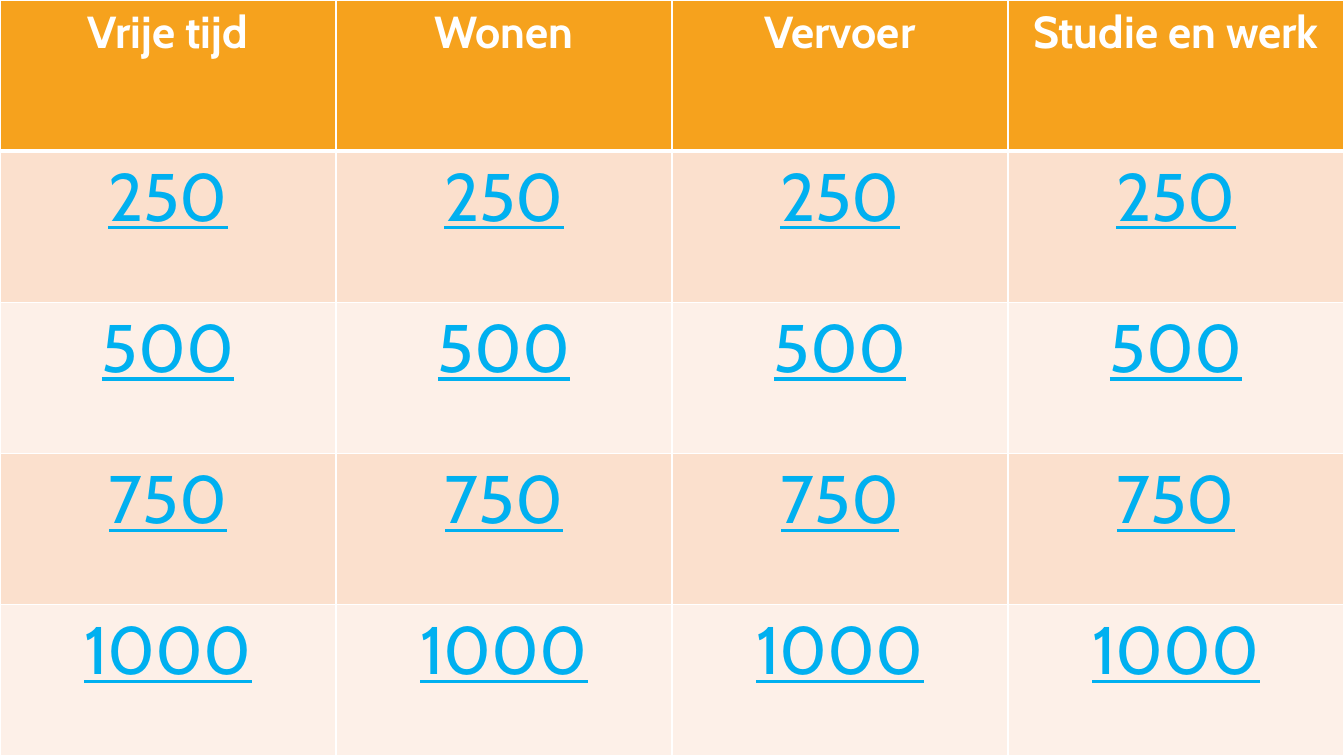
from dataclasses import dataclass

import lxml.etree
import pptx
import pptx.dml.color
import pptx.enum.text
import pptx.oxml.ns
import pptx.util


@dataclass(frozen=True)
class Theme:
    """Colours, font and sizes of the quiz board."""
    font: str = "Cabin"
    background: str = "F2F2F2"
    header_fill: str = "F6A21D"
    band_fills: tuple = ("FBE0CD", "FDF0E8")
    header_text: str = "FFFFFF"
    points_text: str = "00B0F0"
    border: str = "FFFFFF"
    header_size: int = 32
    points_size: int = 48
    thin_border: int = 1
    thick_border: int = 3


THEME = Theme()
CATEGORIES = ("Vrije tijd", "Wonen", "Vervoer", "Studie en werk")
POINTS = (250, 500, 750, 1000)
SLIDE_WIDTH = pptx.util.Inches(13.33)
SLIDE_HEIGHT = pptx.util.Inches(7.5)


def color(value):
    """Return the RGB colour for a hexadecimal value."""
    return pptx.dml.color.RGBColor.from_string(value)


def set_border(cell, side, width):
    """Draw one side of a cell: L, R, T or B."""
    properties = cell._tc.get_or_add_tcPr()
    line = lxml.etree.SubElement(properties, pptx.oxml.ns.qn(f"a:ln{side}"), w=str(pptx.util.Pt(width)))
    fill = lxml.etree.SubElement(line, pptx.oxml.ns.qn("a:solidFill"))
    lxml.etree.SubElement(fill, pptx.oxml.ns.qn("a:srgbClr"), val=THEME.border)


def fill_cell(cell, fill, top, bottom):
    """Give a cell its borders and its fill."""
    for side, width in (("L", THEME.thin_border), ("R", THEME.thin_border), ("T", top), ("B", bottom)):
        set_border(cell, side, width)
    cell.fill.solid()
    cell.fill.fore_color.rgb = color(fill)


def write_cell(cell, text, size, text_color, bold=False, underline=False):
    """Write one centred run into a cell."""
    paragraph = cell.text_frame.paragraphs[0]
    paragraph.alignment = pptx.enum.text.PP_ALIGN.CENTER
    run = paragraph.add_run()
    run.text = text
    run.font.name = THEME.font
    run.font.size = pptx.util.Pt(size)
    run.font.color.rgb = color(text_color)
    run.font.bold = bold
    run.font.underline = underline


def add_board(slide):
    """Add the full-slide table of categories and points."""
    row_count = len(POINTS) + 1
    table = slide.shapes.add_table(row_count, len(CATEGORIES), 0, 0, SLIDE_WIDTH, SLIDE_HEIGHT).table
    for column, category in enumerate(CATEGORIES):
        header = table.cell(0, column)
        fill_cell(header, THEME.header_fill, THEME.thin_border, THEME.thick_border)
        write_cell(header, category, THEME.header_size, THEME.header_text, bold=True)
        for row, points in enumerate(POINTS, start=1):
            cell = table.cell(row, column)
            top = THEME.thick_border if row == 1 else THEME.thin_border
            fill_cell(cell, THEME.band_fills[(row - 1) % 2], top, THEME.thin_border)
            write_cell(cell, str(points), THEME.points_size, THEME.points_text, underline=True)


def main():
    """Build the quiz board slide."""
    presentation = pptx.Presentation()
    presentation.slide_width = SLIDE_WIDTH
    presentation.slide_height = SLIDE_HEIGHT
    slide = presentation.slides.add_slide(presentation.slide_layouts[6])
    slide.background.fill.solid()
    slide.background.fill.fore_color.rgb = color(THEME.background)
    add_board(slide)
    presentation.save("out.pptx")


if __name__ == "__main__":
    main()
